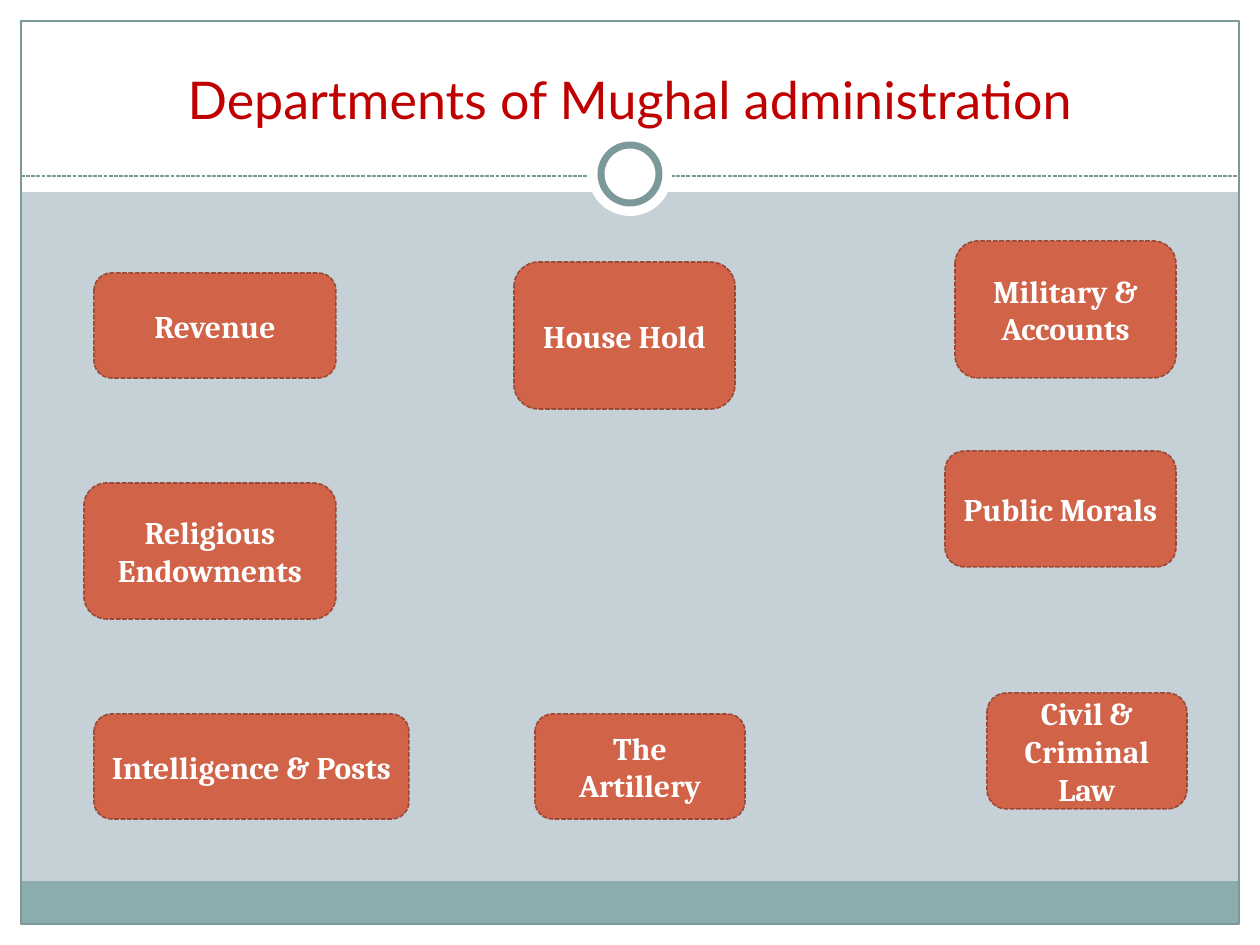
"""Build the slide on the departments of Mughal administration."""
from dataclasses import dataclass

from lxml.etree import SubElement
from pptx import Presentation
from pptx.dml.color import RGBColor
from pptx.enum.dml import MSO_LINE as Dash
from pptx.enum.shapes import MSO_CONNECTOR, MSO_SHAPE as Shape
from pptx.enum.text import MSO_ANCHOR as Anchor, PP_ALIGN as Align
from pptx.oxml.ns import qn
from pptx.util import Emu, Pt


@dataclass(frozen=True)
class Theme:
    background: str = "C5D1D7"
    white: str = "FFFFFF"
    footer: str = "8CADAE"
    frame: str = "7C999A"
    title: str = "C00000"
    box: str = "D16349"
    box_edge: str = "9B4936"
    title_font: str = "Lato"
    box_font: str = "Cambria"
    title_size: float = 29.7
    box_size: float = 18
    thin: float = 0.75
    edge: float = 0.9
    ring: float = 4


THEME = Theme()
WIDTH, HEIGHT, MARGIN = 1260, 945, 21
HEADER, FOOTER, RULE_Y = 192, 43, 176
DISC, RING, RING_Y = 84, 58, 174
TITLE = "Departments of Mughal administration"
TITLE_BOX = (42, 31, 1176, 105)
DEPARTMENTS = [
    ("Revenue", (94, 273, 242, 105)),
    ("House Hold", (514, 262, 221, 147)),
    ("Religious Endowments", (84, 483, 252, 136)),
    ("Public Morals", (945, 451, 231, 116)),
    ("Military & Accounts", (955, 241, 221, 137)),
    ("Intelligence & Posts", (94, 714, 315, 105)),
    ("The Artillery", (535, 714, 210, 105)),
    ("Civil & Criminal Law", (987, 693, 200, 116)),
]


def px(length):
    return Emu(round(length * 914400 / 126))


def color(value):
    return RGBColor.from_string(value)


def set_line(line, value, width, dash=None):
    line.color.rgb = color(value)
    line.width = Pt(width)
    if dash:
        line.dash_style = dash


def add_shape(slide, kind, box, fill=None, line=None, width=THEME.thin, dash=None):
    shape = slide.shapes.add_shape(kind, *map(px, box))
    shape.shadow.inherit = False
    if fill:
        shape.fill.solid()
        shape.fill.fore_color.rgb = color(fill)
    else:
        shape.fill.background()
    if line:
        set_line(shape.line, line, width, dash)
    else:
        shape.line.fill.background()
    return shape


def write(shape, text, font, size, value, anchor, bold=False):
    frame = shape.text_frame
    frame.word_wrap = True
    frame.vertical_anchor = anchor
    frame.text = text
    paragraph = frame.paragraphs[0]
    paragraph.alignment = Align.CENTER
    style = paragraph.runs[0].font
    style.name, style.size, style.bold = font, Pt(size), bold
    style.color.rgb = color(value)


def centred(size):
    return (WIDTH - size) / 2, RING_Y - size / 2, size, size


def add_backdrop(slide):
    inner_width, bottom = WIDTH - 2 * MARGIN, HEIGHT - MARGIN
    bands = [
        ((0, bottom, WIDTH, MARGIN), THEME.white),
        ((0, 0, WIDTH, HEADER), THEME.white),
        ((0, 0, MARGIN, HEIGHT), THEME.white),
        ((WIDTH - MARGIN, 0, MARGIN, HEIGHT), THEME.white),
        ((MARGIN, bottom - FOOTER, inner_width, FOOTER), THEME.footer),
    ]
    for box, fill in bands:
        add_shape(slide, Shape.RECTANGLE, box, fill)
    frame = (MARGIN, MARGIN, inner_width, HEIGHT - 2 * MARGIN)
    add_shape(slide, Shape.RECTANGLE, frame, line=THEME.frame)
    ends = (MARGIN, RULE_Y, WIDTH - MARGIN, RULE_Y)
    rule = slide.shapes.add_connector(MSO_CONNECTOR.STRAIGHT, *map(px, ends))
    set_line(rule.line, THEME.frame, THEME.thin, Dash.SQUARE_DOT)
    SubElement(rule.element.spPr, qn("a:effectLst"))
    add_shape(slide, Shape.OVAL, centred(DISC), THEME.white)
    add_shape(slide, Shape.OVAL, centred(RING), THEME.white, THEME.frame, THEME.ring)


def main():
    deck = Presentation()
    deck.slide_width, deck.slide_height = px(WIDTH), px(HEIGHT)
    slide = deck.slides.add_slide(deck.slide_layouts[6])
    slide.background.fill.solid()
    slide.background.fill.fore_color.rgb = color(THEME.background)
    add_backdrop(slide)
    title = slide.shapes.add_textbox(*map(px, TITLE_BOX))
    write(title, TITLE, THEME.title_font, THEME.title_size, THEME.title, Anchor.BOTTOM)
    for name, box in DEPARTMENTS:
        department = add_shape(slide, Shape.FLOWCHART_ALTERNATE_PROCESS, box,
                               THEME.box, THEME.box_edge, THEME.edge, Dash.SQUARE_DOT)
        write(department, name, THEME.box_font, THEME.box_size, THEME.white,
              Anchor.MIDDLE, bold=True)
    deck.save("out.pptx")


if __name__ == "__main__":
    main()
